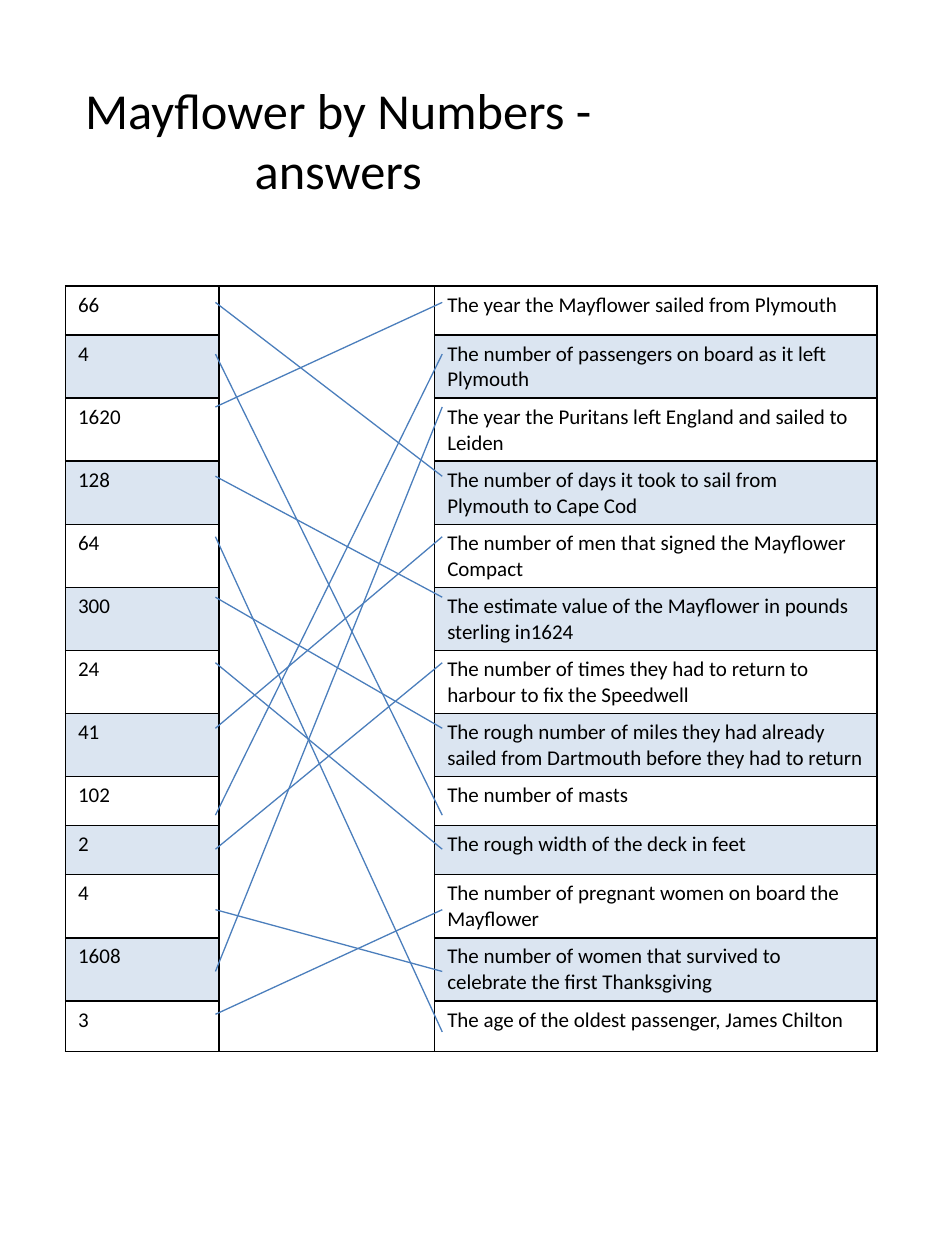
from lxml.etree import SubElement
from pptx import Presentation
from pptx.dml.color import RGBColor
from pptx.enum.shapes import MSO_CONNECTOR
from pptx.enum.text import MSO_ANCHOR, PP_ALIGN
from pptx.oxml import parse_xml
from pptx.oxml.ns import nsdecls, qn
from pptx.util import Inches, Pt

COLORS = {"text": "000000", "border": "000000", "band": "4F81BD", "match": "4B7EBC"}
FONT = "Calibri"
COLUMN_WIDTHS = [1.22, 1.71, 3.51]
ONE_LINE_ROWS = {0, 8, 9, 12}
FACTS = [
    ("66", "The year the Mayflower sailed from Plymouth"),
    ("4", "The number of passengers on board as it left Plymouth"),
    ("1620", "The year the Puritans left England and sailed to Leiden"),
    ("128", "The number of days it took to sail from Plymouth to Cape Cod"),
    ("64", "The number of men that signed the Mayflower Compact"),
    ("300", "The estimate value of the Mayflower in pounds sterling in1624"),
    ("24", "The number of times they had to return to harbour to fix the Speedwell"),
    ("41", "The rough number of miles they had already sailed from Dartmouth "
           "before they had to return"),
    ("102", "The number of masts"),
    ("2", "The rough width of the deck in feet"),
    ("4", "The number of pregnant women on board the Mayflower"),
    ("1608", "The number of women that survived to celebrate the first Thanksgiving"),
    ("3", "The age of the oldest passenger, James Chilton"),
]
MATCHES = [3, 8, 0, 5, 12, 7, 9, 4, 1, 6, 11, 2, 10]
NUMBER_HEIGHTS = [2.4, 2.81, 3.23, 3.78, 4.26, 4.74, 5.26, 5.78, 6.47, 6.74, 7.22, 7.71, 8.05]
FACT_HEIGHTS = NUMBER_HEIGHTS[:-1] + [8.19]


def write(text_frame, text, size):
    text_frame.text = text
    for span in text_frame.paragraphs[0].runs:
        span.font.name = FONT
        span.font.size = Pt(size)
        span.font.color.rgb = RGBColor.from_string(COLORS["text"])


def add_title(page):
    box = page.shapes.add_textbox(Inches(0.52), Inches(0.75), Inches(4.33), Inches(0.71))
    box.text_frame.word_wrap = True
    box.text_frame.vertical_anchor = MSO_ANCHOR.MIDDLE
    write(box.text_frame, "Mayflower by Numbers - answers", 28.8)
    box.text_frame.paragraphs[0].alignment = PP_ALIGN.CENTER


def style_cell(cell, banded):
    if banded:
        cell.fill.solid()
        cell.fill.fore_color.rgb = RGBColor.from_string(COLORS["band"])
    else:
        cell.fill.background()
    properties = cell._tc.get_or_add_tcPr()
    if banded:
        color = properties.find(qn("a:solidFill"))[0]
        SubElement(color, qn("a:alpha"), val="20000")
    for position, side in enumerate(("lnL", "lnR", "lnT", "lnB")):
        border = parse_xml(
            f'<a:{side} {nsdecls("a")} w="{Pt(1)}"><a:solidFill>'
            f'<a:srgbClr val="{COLORS["border"]}"/></a:solidFill></a:{side}>')
        properties.insert(position, border)


def add_fact_table(page):
    frame = page.shapes.add_table(len(FACTS), len(COLUMN_WIDTHS), Inches(0.52),
                                  Inches(2.27), Inches(6.44), Inches(6.06))
    table = frame.table
    table.first_row = False
    table.horz_banding = False
    for column, width in zip(table.columns, COLUMN_WIDTHS):
        column.width = Inches(width)
    for index, (number, fact) in enumerate(FACTS):
        table.rows[index].height = Inches(0.39 if index in ONE_LINE_ROWS else 0.48)
        for column, text in enumerate((number, "", fact)):
            cell = table.cell(index, column)
            style_cell(cell, index % 2 == 1 and column != 1)
            if text:
                write(cell.text_frame, text, 12)
    table.cell(0, 1).merge(table.cell(len(FACTS) - 1, 1))


def add_match_lines(page):
    group = page.shapes.add_group_shape()
    for number_height, match in zip(NUMBER_HEIGHTS, MATCHES):
        line = group.shapes.add_connector(
            MSO_CONNECTOR.STRAIGHT, Inches(3.51), Inches(FACT_HEIGHTS[match]),
            Inches(1.71), Inches(number_height))
        line.line.width = Pt(0.75)
        line.line.color.rgb = RGBColor.from_string(COLORS["match"])
        SubElement(line._element.spPr, qn("a:effectLst"))


def main():
    deck = Presentation()
    deck.slide_width = Inches(7.5)
    deck.slide_height = Inches(10)
    page = deck.slides.add_slide(deck.slide_layouts[6])
    add_title(page)
    add_fact_table(page)
    add_match_lines(page)
    deck.save("out.pptx")


if __name__ == "__main__":
    main()
